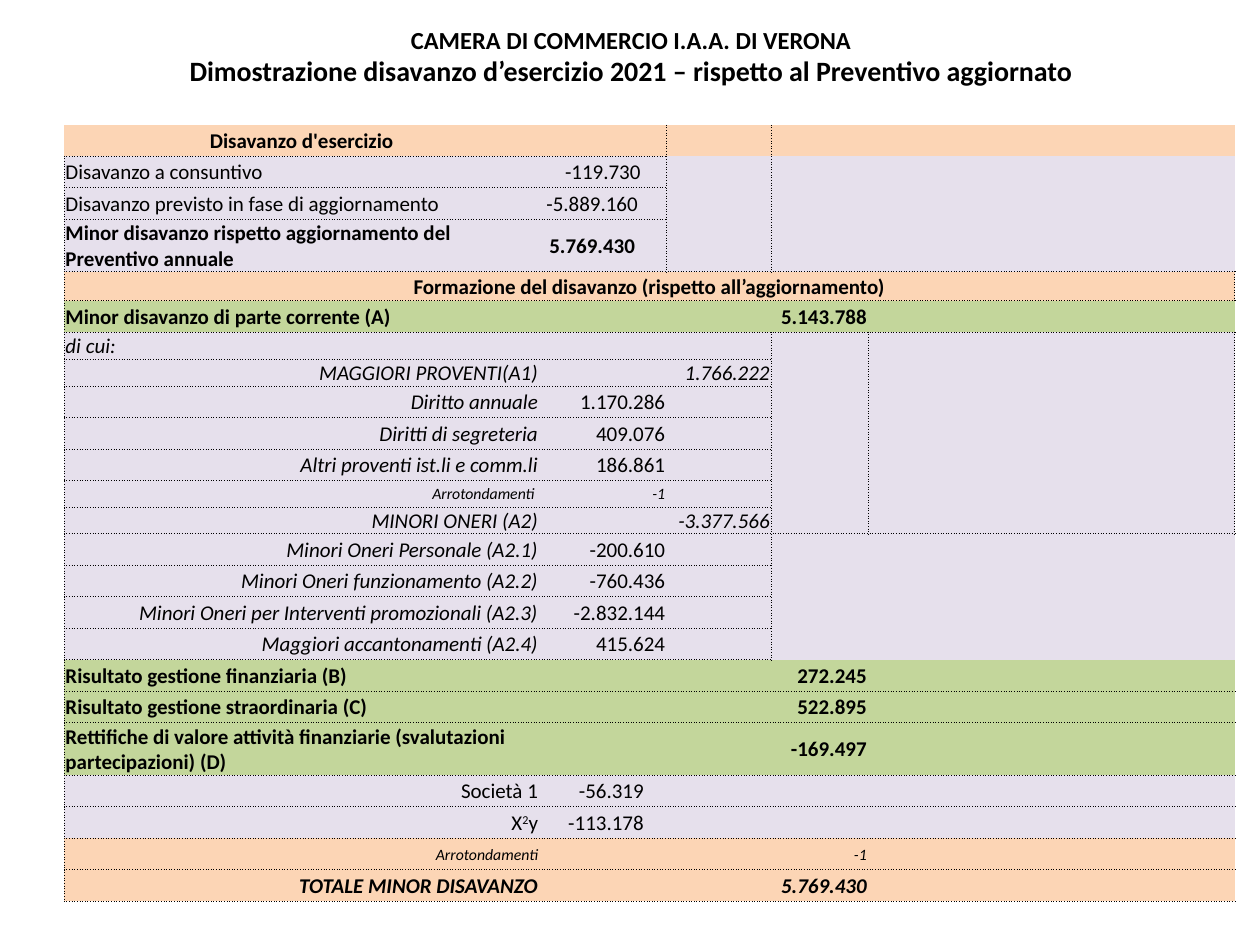
"""Build the slide that breaks down the 2021 operating deficit against the updated budget."""
from lxml.etree import SubElement
from pptx import Presentation
from pptx.dml.color import RGBColor
from pptx.enum.text import MSO_ANCHOR as Anchor, PP_ALIGN as Align
from pptx.oxml.ns import qn
from pptx.util import Inches, Pt


def color(value):
    return RGBColor.from_string(value)


def add_span(para, text, size, bold=False, italic=False):
    span = para.add_run()
    span.text = text
    formats = {"name": "Calibri", "size": Pt(size), "bold": bold, "italic": italic}
    for name, value in formats.items():
        setattr(span.font, name, value)
    span.font.color.rgb = color("000000")
    return span


ORANGE, LILAC, GREEN = "FCD5B5", "E6E0EC", "C3D69B"
ALIGNMENTS = {"l": Align.LEFT, "c": Align.CENTER, "r": Align.RIGHT}
SIDES = {"l": "a:lnL", "r": "a:lnR", "t": "a:lnT", "b": "a:lnB"}
BORDERS = {
    "header": ["b", "b", "rb", "l", "", ""],
    "summary": ["ltb", "tb", "rtb", "l", "", ""],
    "summary_wide": ["ltb", "rtb", "rtb", "l", "", ""],
    "band": ["lrtb"] * 6,
    "total": ["ltb"] + ["tb"] * 5,
    "first_total": ["ltb", "tb", "tb", "tb", "b", "b"],
    "detail": ["ltb", "tb", "tb", "rtb", "lt", "rt"],
    "cost": ["ltb", "tb", "tb", "rtb", "l", ""],
}

ROWS = [
    ("header", 0.25, ORANGE, [(0, "Disavanzo d'esercizio", "c", "b")]),
    ("summary_wide", 0.25, LILAC, [(0, "Disavanzo a consuntivo", "l", ""), (1, "-119.730", "c", "")]),
    ("summary", 0.25, LILAC, [(0, "Disavanzo previsto in fase di aggiornamento", "l", ""),
                              (1, "-5.889.160", "c", "")]),
    ("summary", 0.41, LILAC, [(0, "Minor disavanzo rispetto aggiornamento del Preventivo annuale", "l", "b"),
                              (1, "5.769.430", "c", "b")]),
    ("band", 0.23, ORANGE, [(0, "Formazione del disavanzo (rispetto all’aggiornamento)", "c", "b")]),
    ("total", 0.25, GREEN, [(0, "Minor disavanzo di parte corrente (A)", "l", "b"), (4, "5.143.788", "r", "b")]),
    ("detail", 0.21, LILAC, [(0, "di cui:", "l", "i")]),
    ("detail", 0.21, LILAC, [(0, "MAGGIORI PROVENTI(A1)", "r", "i"), (3, "1.766.222", "r", "i")]),
    ("detail", 0.25, LILAC, [(0, "Diritto annuale", "r", "i"), (1, "1.170.286", "r", "")]),
    ("detail", 0.25, LILAC, [(0, "Diritti di segreteria", "r", "i"), (1, "409.076", "r", "")]),
    ("detail", 0.25, LILAC, [(0, "Altri proventi ist.li e comm.li", "r", "i"), (1, "186.861", "r", "")]),
    ("detail", 0.21, LILAC, [(0, "Arrotondamenti ", "r", "is"), (1, "-1", "r", "is")]),
    ("detail", 0.21, LILAC, [(0, "MINORI ONERI (A2)", "r", "i"), (3, "-3.377.566", "r", "i")]),
    ("cost", 0.25, LILAC, [(0, "Minori Oneri Personale (A2.1)", "r", "i"), (1, "-200.610", "r", "")]),
    ("cost", 0.25, LILAC, [(0, "Minori Oneri funzionamento (A2.2)", "r", "i"), (1, "-760.436", "r", "")]),
    ("cost", 0.25, LILAC, [(0, "Minori Oneri per Interventi promozionali (A2.3)", "r", "i"),
                           (1, "-2.832.144", "r", "")]),
    ("cost", 0.25, LILAC, [(0, "Maggiori accantonamenti (A2.4)", "r", "i"), (1, "415.624", "r", "")]),
    ("first_total", 0.25, GREEN, [(0, "Risultato gestione finanziaria (B)", "l", "b"), (4, "272.245", "r", "b")]),
    ("total", 0.25, GREEN, [(0, "Risultato gestione straordinaria (C)", "l", "b"), (4, "522.895", "r", "b")]),
    ("total", 0.41, GREEN, [
        (0, "Rettifiche di valore attività finanziarie (svalutazioni partecipazioni) (D)", "l", "b"),
        (4, "-169.497", "r", "b")]),
    ("total", 0.25, LILAC, [(0, "Società 1", "r", ""), (1, "-56.319", "r", "")]),
    ("total", 0.25, LILAC, [(0, "X²y", "r", ""), (1, "-113.178", "r", "")]),
    ("total", 0.25, ORANGE, [(0, "Arrotondamenti", "r", "is"), (4, "-1", "r", "is")]),
    ("total", 0.25, ORANGE, [(0, "TOTALE MINOR DISAVANZO", "r", "bi"), (4, "5.769.430", "r", "bi")]),
]
COLUMN_WIDTHS = [3.77, 0.84, 0.17, 0.83, 0.77, 2.91]
MERGES = [((row, 4), (row, 5)) for row in range(4)]
MERGES += [((row, 1), (row, 2)) for row in (1, 8, 9, 10, 11, 13, 14, 15, 16)]
MERGES += [((4, 0), (4, 5)), ((6, 4), (12, 4)), ((6, 5), (12, 5))]

deck = Presentation()
deck.slide_width, deck.slide_height = Inches(10), Inches(7.5)
slide = deck.slides.add_slide(deck.slide_layouts[5])

title = slide.shapes.title
title.left, title.top, title.width, title.height = Inches(0.51), Inches(0.13), Inches(9), Inches(0.63)
title.text_frame.vertical_anchor = Anchor.MIDDLE
heading = title.text_frame.paragraphs[0]
heading.alignment = Align.CENTER
add_span(heading, "CAMERA DI COMMERCIO I.A.A. DI VERONA", 14, bold=True)
heading.add_line_break()
add_span(heading, "Dimostrazione disavanzo d’esercizio 2021 – rispetto al Preventivo aggiornato", 16, bold=True)

frame = slide.shapes.add_table(
    len(ROWS), len(COLUMN_WIDTHS), Inches(0.51), Inches(0.99),
    Inches(sum(COLUMN_WIDTHS)), Inches(sum(row[1] for row in ROWS)))
table = frame.table
table.first_row = table.horz_banding = False
table._tbl.tblPr.find(qn("a:tableStyleId")).text = "{2D5ABB26-0587-4C30-8999-92F81FD0307C}"
for column, width in zip(table.columns, COLUMN_WIDTHS):
    column.width = Inches(width)
for first, last in MERGES:
    table.cell(*first).merge(table.cell(*last))

for row_index, (kind, height, fill, texts) in enumerate(ROWS):
    table.rows[row_index].height = Inches(height)
    wording = {column: rest for column, *rest in texts}
    for column_index, sides in enumerate(BORDERS[kind]):
        cell = table.cell(row_index, column_index)
        cell_formats = {"margin_left": Inches(0.01), "margin_right": Inches(0.01), "margin_top": Inches(0.01),
                        "margin_bottom": 0, "vertical_anchor": Anchor.MIDDLE}
        for name, value in cell_formats.items():
            setattr(cell, name, value)
        for side in "" if cell.is_spanned else sides:
            line = SubElement(cell._tc.get_or_add_tcPr(), qn(SIDES[side]), w=str(Pt(0.5)))
            SubElement(SubElement(line, qn("a:solidFill")), qn("a:srgbClr"), val="000000")
            SubElement(line, qn("a:prstDash"), val="sysDot")
        cell.fill.solid()
        cell.fill.fore_color.rgb = color(fill)
        para = cell.text_frame.paragraphs[0]
        if column_index not in wording:
            SubElement(para._p, qn("a:endParaRPr"), sz="900")
            continue
        text, alignment, style = wording[column_index]
        para.alignment = ALIGNMENTS[alignment]
        for piece in filter(None, text.partition("²")):
            raised = piece == "²"
            span = add_span(para, "2" if raised else piece, 9 if "s" in style else 12, "b" in style, "i" in style)
            if raised:
                span._r.get_or_add_rPr().set("baseline", "30000")

deck.save("out.pptx")
